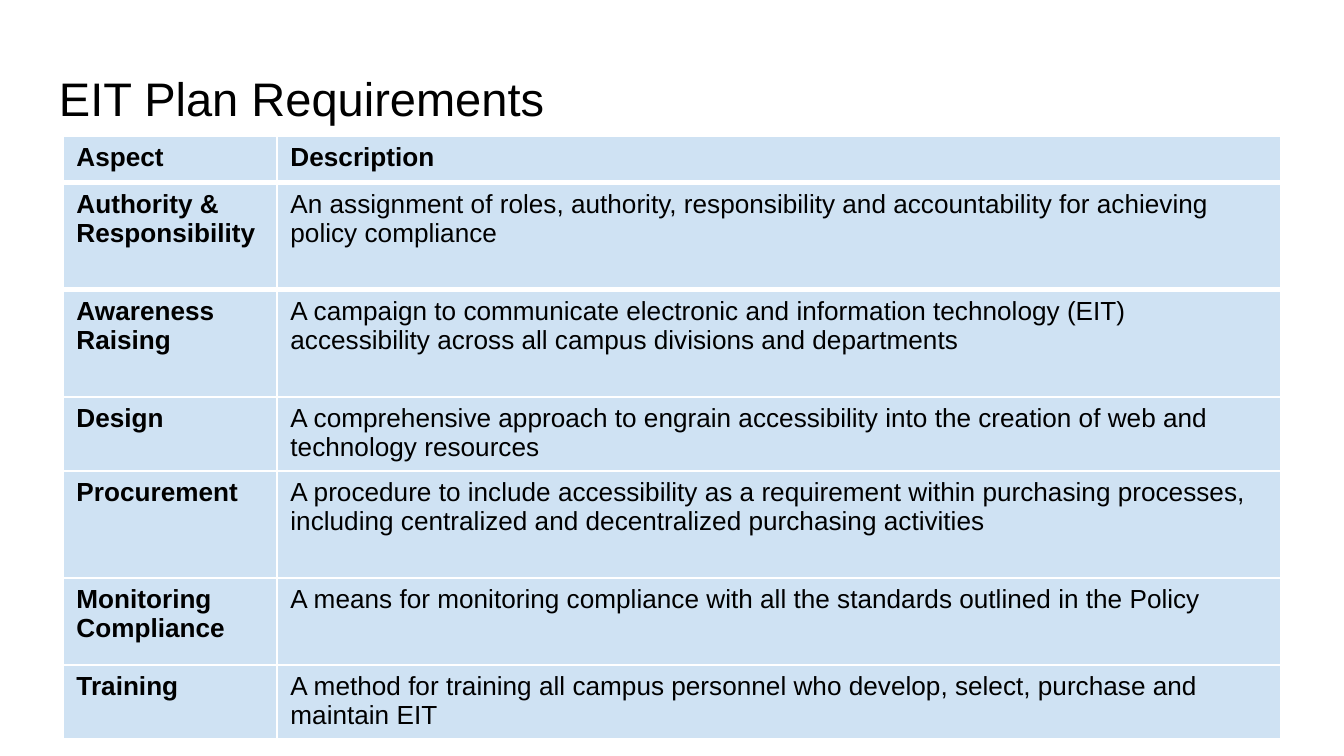
from dataclasses import dataclass

from lxml.etree import SubElement
from pptx import Presentation
from pptx.dml.color import RGBColor
from pptx.enum.text import MSO_ANCHOR, PP_ALIGN
from pptx.oxml.ns import qn
from pptx.util import Pt

# Content
TITLE = "EIT Plan Requirements"
HEADINGS = ("Aspect", "Description")
ASPECTS = [  # aspect, description, row height in px
    ("Authority & Responsibility",
     "An assignment of roles, authority, responsibility and accountability "
     "for achieving policy compliance", 107),
    ("Awareness Raising",
     "A campaign to communicate electronic and information technology (EIT) "
     "accessibility across all campus divisions and departments", 107),
    ("Design",
     "A comprehensive approach to engrain accessibility into the creation of "
     "web and technology resources", 74),
    ("Procurement",
     "A procedure to include accessibility as a requirement within purchasing "
     "processes, including centralized and decentralized purchasing activities", 107),
    ("Monitoring Compliance",
     "A means for monitoring compliance with all the standards outlined in "
     "the Policy", 87),
    ("Training",
     "A method for training all campus personnel who develop, select, purchase "
     "and maintain EIT", 74),
]
ROWS = [(*HEADINGS, 47), *ASPECTS]

# Layout in px
PAGE_SIZE = (1344, 756)
TITLE_BOX = (46, 54, 1253, 85)
TITLE_INSET = 13
TABLE_ORIGIN = (63, 136)
COLUMN_WIDTHS = (214, 1004)
THICK_RULES = (1, 2)  # row boundaries below the heading and the first aspect


@dataclass(frozen=True)
class Theme:
    font: str = "Arial"
    ink: str = "000000"
    cell: str = "CFE2F3"
    rule: str = "FFFFFF"
    title_size: float = 25.2
    body_size: float = 14
    thin: float = 1
    thick: float = 3


THEME = Theme()


def px(value):
    return round(value * 914400 / 134.4)


def write(frame, text, *, size, bold=False, anchor=MSO_ANCHOR.TOP):
    frame.word_wrap = True
    frame.vertical_anchor = anchor
    para = frame.paragraphs[0]
    para.alignment = PP_ALIGN.LEFT
    span = para.add_run()
    span.text = text
    span.font.name = THEME.font
    span.font.size = Pt(size)
    span.font.bold = bold
    span.font.color.rgb = RGBColor.from_string(THEME.ink)


def set_borders(cell, widths):
    """Put the four edge lines ahead of the cell's fill."""
    properties = cell._tc.get_or_add_tcPr()
    for index, (side, width) in enumerate(widths.items()):
        line = SubElement(properties, qn(f"a:ln{side}"), w=str(Pt(width)))
        fill = SubElement(line, qn("a:solidFill"))
        SubElement(fill, qn("a:srgbClr"), val=THEME.rule)
        properties.insert(index, line)


def rule_width(boundary):
    return THEME.thick if boundary in THICK_RULES else THEME.thin


def add_title(page):
    box = page.shapes.title
    box.left, box.top, box.width, box.height = map(px, TITLE_BOX)
    frame = box.text_frame
    frame.margin_left = frame.margin_right = px(TITLE_INSET)
    frame.margin_top = frame.margin_bottom = px(TITLE_INSET)
    write(frame, TITLE, size=THEME.title_size, anchor=MSO_ANCHOR.BOTTOM)


def add_requirements(page):
    size = (sum(COLUMN_WIDTHS), sum(row[-1] for row in ROWS))
    table = page.shapes.add_table(
        len(ROWS), len(COLUMN_WIDTHS), *map(px, TABLE_ORIGIN + size)).table
    table.horz_banding = False
    for column, width in zip(table.columns, COLUMN_WIDTHS):
        column.width = px(width)
    for row_index, (*texts, height) in enumerate(ROWS):
        table.rows[row_index].height = px(height)
        for column_index, text in enumerate(texts):
            cell = table.cell(row_index, column_index)
            cell.fill.solid()
            cell.fill.fore_color.rgb = RGBColor.from_string(THEME.cell)
            set_borders(cell, {"L": THEME.thin, "R": THEME.thin,
                               "T": rule_width(row_index),
                               "B": rule_width(row_index + 1)})
            write(cell.text_frame, text, size=THEME.body_size,
                  bold=row_index == 0 or column_index == 0)


def main():
    deck = Presentation()
    deck.slide_width, deck.slide_height = map(px, PAGE_SIZE)
    page = deck.slides.add_slide(deck.slide_layouts[5])
    add_title(page)
    add_requirements(page)
    deck.save("out.pptx")


if __name__ == "__main__":
    main()
